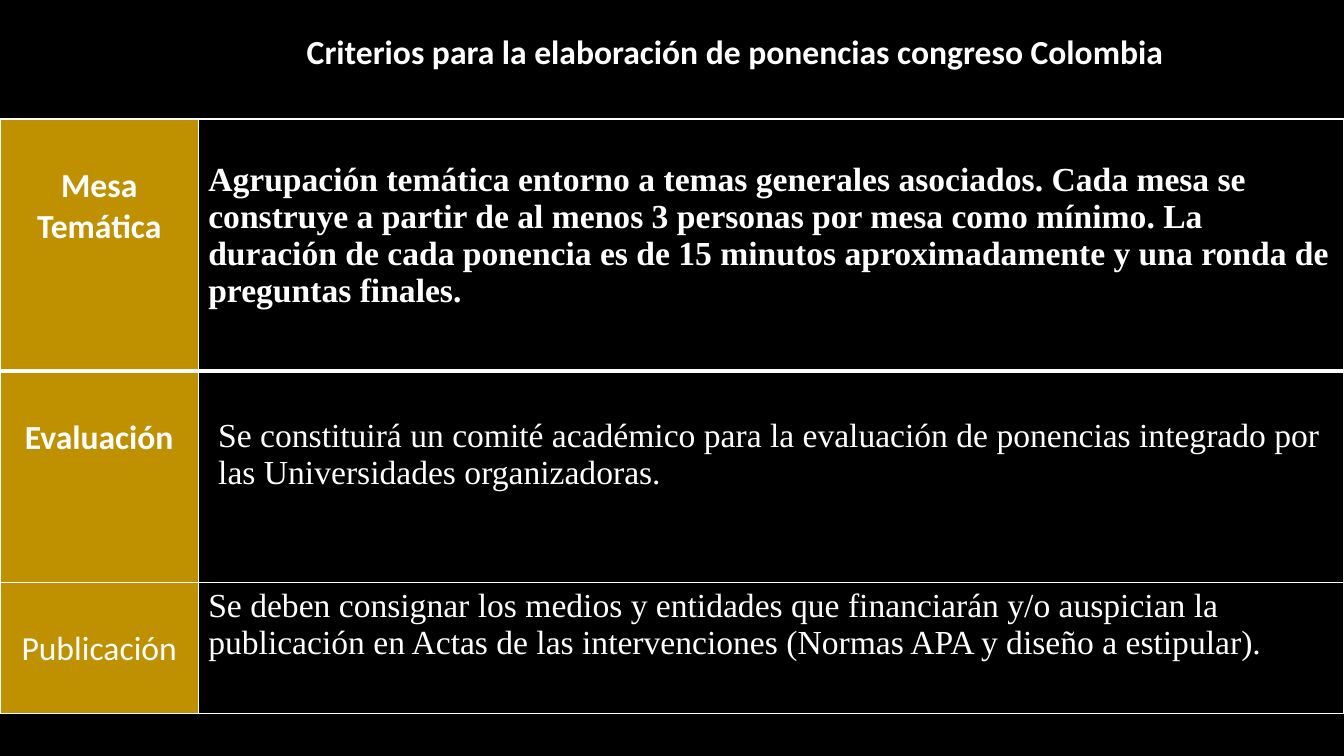
from lxml.etree import SubElement
from pptx import Presentation
from pptx.dml.color import RGBColor
from pptx.enum.text import MSO_ANCHOR, MSO_AUTO_SIZE, PP_ALIGN
from pptx.oxml.ns import qn
from pptx.util import Cm, Pt

BLACK, WHITE, GOLD = "000000", "FFFFFF", "BF9000"
LABEL_FONT, DETAIL_FONT = "Calibri", "Times New Roman"
COLUMN_WIDTHS = (5, 28.86)

CRITERIA = [
    dict(height=6.35, rule=3, label="Mesa Temática", label_bold=True,
         detail="Agrupación temática entorno a temas generales asociados. Cada mesa se "
                "construye a partir de al menos 3 personas por mesa como mínimo. La duración "
                "de cada ponencia es de 15 minutos aproximadamente y una ronda de preguntas "
                "finales.",
         detail_bold=True, detail_top=1.06, detail_left=0.25),
    dict(height=5.33, rule=1, label="Evaluación", label_bold=True,
         detail="Se constituirá un comité académico para la evaluación de ponencias "
                "integrado por las Universidades organizadoras.",
         detail_bold=False, detail_top=1.17, detail_left=0.5),
    dict(height=3.3, rule=1, label="Publicación", label_bold=False,
         detail="Se deben consignar los medios y entidades que financiarán y/o auspician la "
                "publicación en Actas de las intervenciones (Normas APA y diseño a estipular).",
         detail_bold=False, detail_top=0.13, detail_left=0.25),
]


def paint(fill, color):
    """Give a fill one solid colour."""
    fill.solid()
    fill.fore_color.rgb = RGBColor.from_string(color)


def set_all(target, values):
    """Set every attribute in a dict of format values."""
    for attribute, value in values.items():
        setattr(target, attribute, value)


def write(frame, wording, alignment, font, bold):
    """Write one white 24-point paragraph."""
    frame.text = wording
    paragraph = frame.paragraphs[0]
    paragraph.alignment = alignment
    lettering = paragraph.runs[0].font
    set_all(lettering, dict(name=font, size=Pt(24), bold=bold))
    paint(lettering.fill, WHITE)


def rule_cell(cell, above, below):
    """Draw white borders around a cell, with the given top and bottom weights."""
    properties = cell._tc.get_or_add_tcPr()
    for side, weight in dict(lnL=1, lnR=1, lnT=above, lnB=below).items():
        line = SubElement(properties, qn(f"a:{side}"), w=str(Pt(weight)))
        SubElement(SubElement(line, qn("a:solidFill")), qn("a:srgbClr"), val=WHITE)


def add_heading(slide, left, top, width, height):
    """Place the slide title in its box."""
    heading = slide.shapes.title
    set_all(heading, dict(left=left, top=top, width=width, height=height))
    paint(heading.fill, BLACK)
    set_all(heading.text_frame, dict(word_wrap=True, auto_size=MSO_AUTO_SIZE.NONE,
                                     vertical_anchor=MSO_ANCHOR.MIDDLE))
    write(heading.text_frame, "Criterios para la elaboración de ponencias congreso Colombia",
          PP_ALIGN.CENTER, LABEL_FONT, True)


def add_criteria(slide, left, top, width, height):
    """Place the table of criteria in its box."""
    criteria = slide.shapes.add_table(len(CRITERIA), 2, left, top, width, height).table
    set_all(criteria, dict(first_row=False, horz_banding=False))
    for column, column_width in zip(criteria.columns, COLUMN_WIDTHS):
        column.width = Cm(column_width)
    above = 1
    for index, criterion in enumerate(CRITERIA):
        criteria.rows[index].height = Cm(criterion["height"])
        parts = (
            ("label", GOLD, PP_ALIGN.CENTER, LABEL_FONT, 1.17, 0.25),
            ("detail", BLACK, PP_ALIGN.LEFT, DETAIL_FONT,
             criterion["detail_top"], criterion["detail_left"]),
        )
        for position, (part, color, alignment, font, inset, indent) in enumerate(parts):
            cell = criteria.cell(index, position)
            rule_cell(cell, above, criterion["rule"])
            paint(cell.fill, color)
            set_all(cell, dict(margin_top=Cm(inset), margin_left=Cm(indent),
                               margin_right=Cm(0.25), vertical_anchor=MSO_ANCHOR.TOP))
            write(cell.text_frame, criterion[part], alignment, font, criterion[f"{part}_bold"])
        above = criterion["rule"]


def main():
    """Build and save the slide."""
    deck = Presentation()
    set_all(deck, dict(slide_width=Cm(33.87), slide_height=Cm(19.05)))
    slide = deck.slides.add_slide(deck.slide_layouts[5])
    paint(slide.background.fill, BLACK)
    add_heading(slide, Cm(4.62), Cm(0.66), Cm(27.81), Cm(1.27))
    add_criteria(slide, Cm(0), Cm(3), Cm(sum(COLUMN_WIDTHS)),
                 Cm(sum(criterion["height"] for criterion in CRITERIA)))
    deck.save("out.pptx")


if __name__ == "__main__":
    main()
